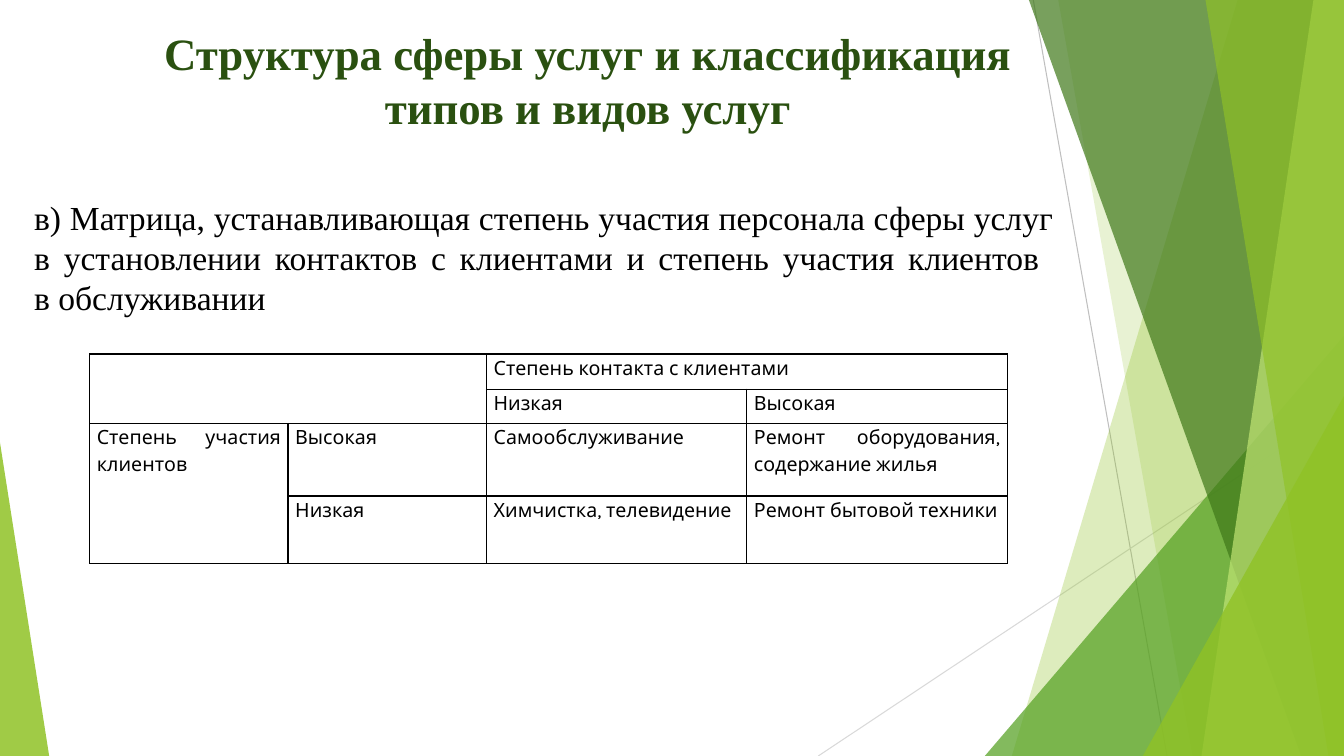
from dataclasses import dataclass

from lxml.etree import SubElement
from pptx import Presentation
from pptx.dml.color import RGBColor
from pptx.enum.shapes import MSO_CONNECTOR, MSO_SHAPE
from pptx.enum.text import MSO_ANCHOR, PP_ALIGN as Align
from pptx.oxml.ns import qn
from pptx.util import Cm, Pt

COLORS = {
    "lime": "90C226", "green": "54A021", "forest": "3F7819", "pale": "C0E474",
    "title": "2A5010", "black": "000000", "gray": "BFBFBF", "light_gray": "D9D9D9",
}
WIDTH, HEIGHT = 33.87, 19.05
SERIF, TABLE_FONT = "Times New Roman", "Karla"


@dataclass
class Ray:
    start: tuple[float, float]
    end: tuple[float, float]
    color: str


@dataclass
class Band:
    """Reaches from a slanted left side to the right edge of the slide."""
    top_x: float
    bottom_x: float
    color: str
    opacity: int


@dataclass
class Corner:
    """Triangle that stands on the bottom edge of the slide."""
    left: float
    width: float
    height: float
    apex: float
    color: str
    opacity: int


@dataclass
class TextBlock:
    box: tuple[float, float, float, float]
    lines: list[str]
    size: int
    color: str
    align: Align
    bold: bool = False


RAYS = [
    Ray((26.04, 0), (29.41, HEIGHT), "gray"),
    Ray((WIDTH, 10.24), (20.62, HEIGHT), "light_gray"),
]
DECORATION = [
    Band(31.19, 25.5, "lime", 30),
    Band(26.67, 30.05, "lime", 20),
    Corner(24.82, 9.05, 10.59, 1, "green", 72),
    Band(25.93, 32.79, "forest", 70),
    Band(33.1, 30.28, "pale", 70),
    Band(30.38, 33.48, "lime", 65),
    Corner(28.8, 5.07, 9.07, 1, "lime", 80),
    Corner(0, 1.24, 7.9, 0, "lime", 85),
]
TEXTS = [
    TextBlock((3.78, 0.53, 22.07, 3), ["Структура сферы услуг и классификация типов и видов услуг"],
              32, "title", Align.CENTER, True),
    TextBlock((0.61, 4.83, 26.19, 3.33),
              ["в) Матрица, устанавливающая степень участия персонала сферы услуг "
               "в установлении контактов с клиентами и степень участия клиентов ",
               "в обслуживании"],
              24, "black", Align.JUSTIFY),
]
COLUMN_WIDTHS = [5, 5, 6.56, 6.56]
ROW_HEIGHTS = [0.89, 0.86, 1.83, 1.7]
MATRIX = [
    ["", "", "Степень контакта с клиентами", ""],
    ["", "", "Низкая", "Высокая"],
    ["Степень участия клиентов", "Высокая", "Самообслуживание",
     "Ремонт оборудования, содержание жилья"],
    ["", "Низкая", "Химчистка, телевидение", "Ремонт бытовой техники"],
]
MERGES = [((0, 0), (1, 1)), ((0, 2), (0, 3)), ((2, 0), (3, 0))]


def rgb(name: str) -> RGBColor:
    return RGBColor.from_string(COLORS[name])


def draw_ray(slide, ray: Ray) -> None:
    line = slide.shapes.add_connector(
        MSO_CONNECTOR.STRAIGHT, *(Cm(value) for value in ray.start + ray.end))
    line.line.color.rgb = rgb(ray.color)
    line.line.width = Pt(0.75)
    SubElement(line._element.spPr, qn("a:effectLst"))


def draw_decoration(slide, part: Band | Corner) -> None:
    if isinstance(part, Band):
        builder = slide.shapes.build_freeform(Cm(part.top_x), 0)
        builder.add_line_segments(
            [(Cm(x), Cm(y)) for x, y in ((WIDTH, 0), (WIDTH, HEIGHT), (part.bottom_x, HEIGHT))])
        shape = builder.convert_to_shape()
    else:
        shape = slide.shapes.add_shape(
            MSO_SHAPE.ISOSCELES_TRIANGLE, Cm(part.left), Cm(HEIGHT - part.height),
            Cm(part.width), Cm(part.height))
        shape.adjustments[0] = part.apex
    shape.shadow.inherit = False
    shape.line.fill.background()
    shape.fill.solid()
    shape.fill.fore_color.rgb = rgb(part.color)
    color = shape._element.spPr.find(qn("a:solidFill"))[0]
    SubElement(color, qn("a:alpha"), val=str(part.opacity * 1000))


def add_run(paragraph, text: str, font: str, size: int, color: str, bold: bool = False) -> None:
    run = paragraph.add_run()
    run.text = text
    run.font.name, run.font.size, run.font.bold = font, Pt(size), bold
    run.font.color.rgb = rgb(color)


def draw_text(slide, block: TextBlock) -> None:
    frame = slide.shapes.add_textbox(*(Cm(value) for value in block.box)).text_frame
    frame.word_wrap = True
    paragraph = frame.paragraphs[0]
    paragraph.alignment = block.align
    for index, line in enumerate(block.lines):
        if index:
            paragraph.add_line_break()
        add_run(paragraph, line, SERIF, block.size, block.color, block.bold)


def style_cell(cell, text: str) -> None:
    cell.margin_left = cell.margin_right = Cm(0.18)
    cell.margin_top = cell.margin_bottom = 0
    cell.vertical_anchor = MSO_ANCHOR.TOP
    properties = cell._tc.get_or_add_tcPr()
    for side in ("lnL", "lnR", "lnT", "lnB"):
        border = SubElement(properties, qn(f"a:{side}"), w=str(Pt(1)))
        fill = SubElement(border, qn("a:solidFill"))
        SubElement(fill, qn("a:srgbClr"), val=COLORS["black"])
    cell.fill.background()
    if text:
        paragraph = cell.text_frame.paragraphs[0]
        paragraph.alignment = Align.JUSTIFY
        paragraph.line_spacing = 1.15
        add_run(paragraph, text, TABLE_FONT, 14, "black")


def draw_matrix(slide) -> None:
    table = slide.shapes.add_table(
        len(ROW_HEIGHTS), len(COLUMN_WIDTHS), Cm(2.26), Cm(8.92),
        Cm(sum(COLUMN_WIDTHS)), Cm(sum(ROW_HEIGHTS))).table
    table.first_row = table.horz_banding = False
    for column, width in zip(table.columns, COLUMN_WIDTHS):
        column.width = Cm(width)
    for row, height, texts in zip(table.rows, ROW_HEIGHTS, MATRIX):
        row.height = Cm(height)
        for cell, text in zip(row.cells, texts):
            style_cell(cell, text)
    for first, last in MERGES:
        table.cell(*first).merge(table.cell(*last))


def main() -> None:
    presentation = Presentation()
    presentation.slide_width, presentation.slide_height = Cm(WIDTH), Cm(HEIGHT)
    slide = presentation.slides.add_slide(presentation.slide_layouts[6])
    # Background decoration
    for ray in RAYS:
        draw_ray(slide, ray)
    for part in DECORATION:
        draw_decoration(slide, part)
    # Title, statement and matrix
    for block in TEXTS:
        draw_text(slide, block)
    draw_matrix(slide)
    presentation.save("out.pptx")


if __name__ == "__main__":
    main()
